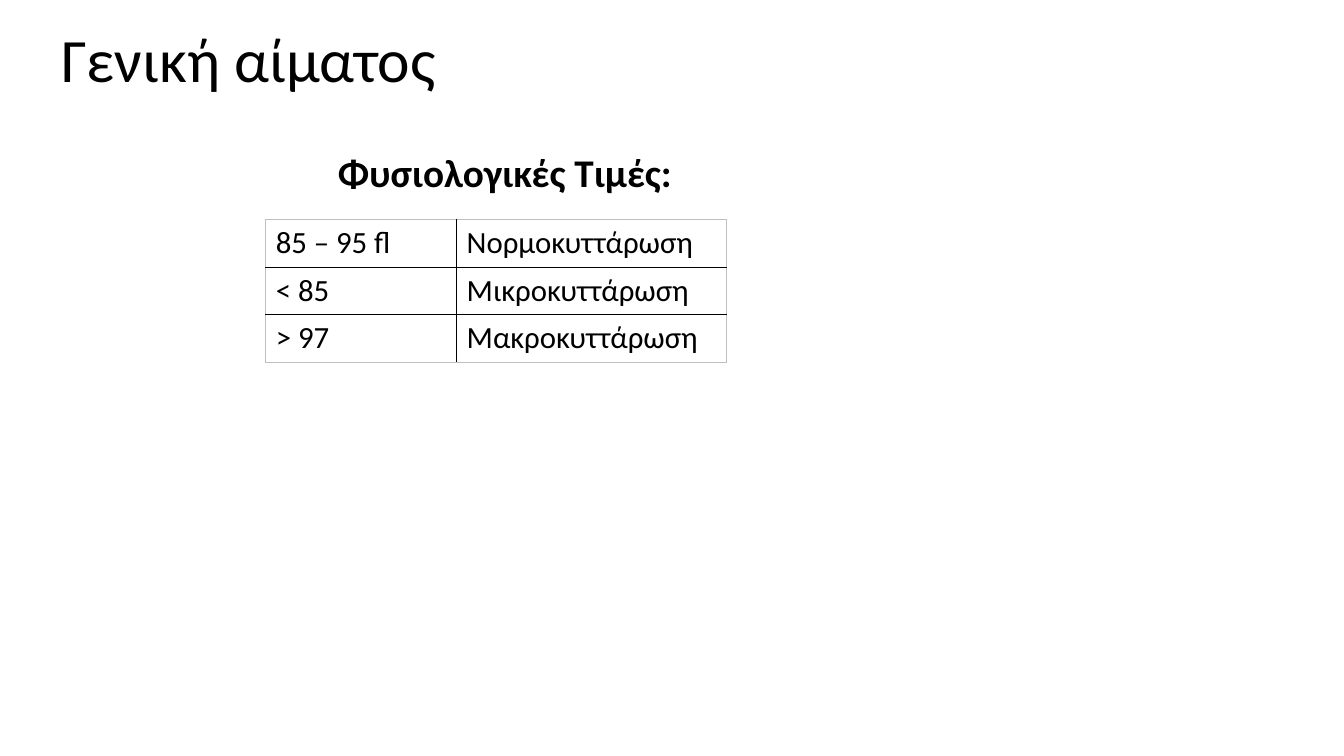
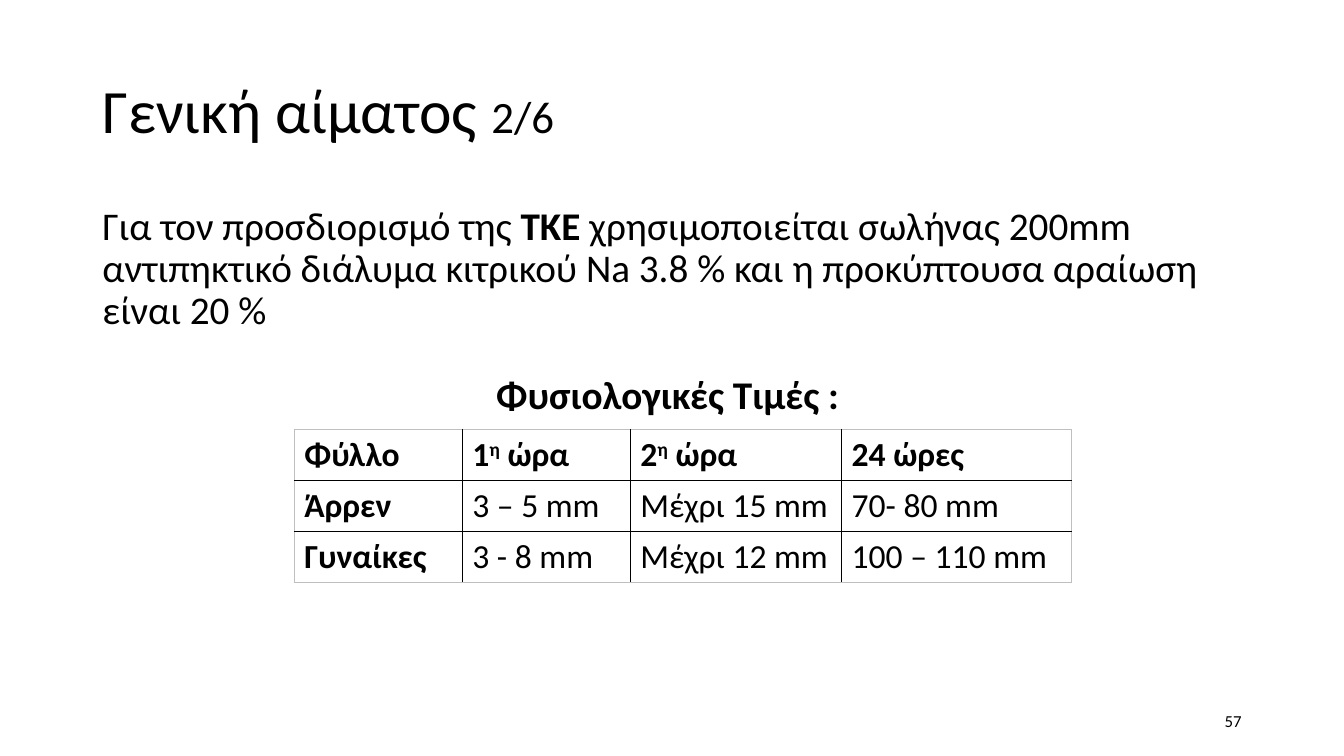
from lxml.etree import SubElement
from pptx import Presentation
from pptx.dml.color import RGBColor
from pptx.enum.text import MSO_ANCHOR as Anchor, MSO_AUTO_SIZE as AutoSize, PP_ALIGN as Align
from pptx.oxml.ns import qn
from pptx.util import Pt

BOLD = {"bold": True}
SUPERSCRIPT = {"bold": True, "baseline": 30000}


def color(value):
    return RGBColor.from_string(value)


class Slides:
    font = "Calibri"
    ink = "000000"
    inner_line = "000000"
    outer_line = "BFBFBF"

    def __init__(self):
        self.deck = Presentation()
        self.deck.slide_width = Pt(960)
        self.deck.slide_height = Pt(540)
        self.page = None

    def add_page(self):
        self.page = self.deck.slides.add_slide(self.deck.slide_layouts[1])

    def place(self, box, left, top, width, height, anchor):
        frame = box.text_frame
        places = {"left": left, "top": top, "width": width, "height": height}
        for name, value in places.items():
            setattr(box, name, Pt(value))
        settings = {"word_wrap": True, "auto_size": AutoSize.NONE, "vertical_anchor": anchor}
        for name, value in settings.items():
            setattr(frame, name, value)
        return frame

    def fill_para(self, para, spans, size, align=Align.LEFT, spacing=1.0, before=0):
        layout = {"alignment": align, "line_spacing": spacing, "space_before": Pt(before)}
        for name, value in layout.items():
            setattr(para, name, value)
        if isinstance(spans, str):
            spans = [(spans, {})]
        for text, changes in spans:
            span = para.add_run()
            span.text = text
            look = {"name": self.font, "size": Pt(size), "bold": False} | changes
            baseline = look.pop("baseline", None)
            for name, value in look.items():
                setattr(span.font, name, value)
            span.font.color.rgb = color(self.ink)
            if baseline:
                span.font._rPr.set("baseline", str(baseline))

    def title(self, spans, *place):
        frame = self.place(self.page.shapes.title, *place, Anchor.MIDDLE)
        self.fill_para(frame.paragraphs[0], spans, 44, spacing=0.9)

    def body(self, paragraphs, *place):
        frame = self.place(self.page.placeholders[1], *place, Anchor.TOP)
        for index, (spans, align) in enumerate(paragraphs):
            para = frame.add_paragraph() if index else frame.paragraphs[0]
            properties = para._p.get_or_add_pPr()
            properties.set("marL", "0")
            properties.set("indent", "0")
            SubElement(properties, qn("a:buNone"))
            self.fill_para(para, spans, 28, align, 0.9, 30 if index else 0)

    def number(self, text):
        box = self.page.shapes.add_textbox(0, 0, 0, 0)
        frame = self.place(box, 678, 500.5, 216, 28.8, Anchor.MIDDLE)
        self.fill_para(frame.paragraphs[0], text, 12, Align.RIGHT)

    def borders(self, cell, outer):
        properties = cell._tc.get_or_add_tcPr()
        for side, is_outer in outer.items():
            line = SubElement(properties, qn(f"a:ln{side}"), w=str(Pt(0.75 if is_outer else 1)))
            fill = SubElement(line, qn("a:solidFill"))
            value = self.outer_line if is_outer else self.inner_line
            SubElement(fill, qn("a:srgbClr"), val=value)

    def table(self, rows, left, top, widths, row_height, size):
        last_row, last_column = len(rows) - 1, len(widths) - 1
        frame = self.page.shapes.add_table(
            len(rows), len(widths), Pt(left), Pt(top),
            Pt(sum(widths)), Pt(row_height * len(rows)))
        table = frame.table
        table.first_row = table.horz_banding = False
        for column, width in zip(table.columns, widths):
            column.width = Pt(width)
        for y, row in enumerate(rows):
            table.rows[y].height = Pt(row_height)
            for x, spans in enumerate(row):
                cell = table.cell(y, x)
                self.borders(cell, {"L": x == 0, "R": x == last_column,
                                    "T": y == 0, "B": y == last_row})
                cell.fill.background()
                self.fill_para(cell.text_frame.paragraphs[0], spans, size)


def bold(text):
    return [(text, BOLD)]


def hour(digit):
    return [(digit, BOLD), ("η", SUPERSCRIPT), (" ώρα", BOLD)]


def main():
    slides = Slides()

    slides.add_page()
    slides.title("Γενική αίματος", 36.5, 9.5, 648, 71)
    slides.body([(bold("Φυσιολογικές Τιμές:"), Align.CENTER)], 36.5, 106, 648, 39.5)
    slides.table([
        ["85 – 95 fl", "Νορμοκυττάρωση"],
        ["< 85", "Μικροκυττάρωση"],
        ["> 97", "Μακροκυττάρωση"],
    ], 189.8, 156.8, [136.4, 193], 34, 22)

    slides.add_page()
    slides.title([("Γενική αίματος ", {}), ("2/6", {"size": Pt(32)})], 66, 28.8, 828, 104.4)
    slides.body([
        ([("Για τον προσδιορισμό της ", {}), ("ΤΚΕ", BOLD),
          (" χρησιμοποιείται σωλήνας 200mm αντιπηκτικό διάλυμα κιτρικού Na 3.8 % "
           "και η προκύπτουσα αραίωση είναι 20 %", {})], Align.LEFT),
        (bold("Φυσιολογικές Τιμές : "), Align.CENTER),
    ], 66, 143.8, 828, 342.7)
    slides.table([
        [bold("Φύλλο"), hour("1"), hour("2"), bold("24 ώρες")],
        [bold("Άρρεν"), "3 – 5 mm", "Μέχρι 15 mm", "70- 80 mm"],
        [bold("Γυναίκες"), "3 - 8 mm", "Μέχρι 12 mm", "100 – 110 mm"],
    ], 210.2, 306.7, [120, 120, 151, 164.5], 36.5, 24)
    slides.number("57")

    slides.deck.save("out.pptx")


if __name__ == "__main__":
    main()
